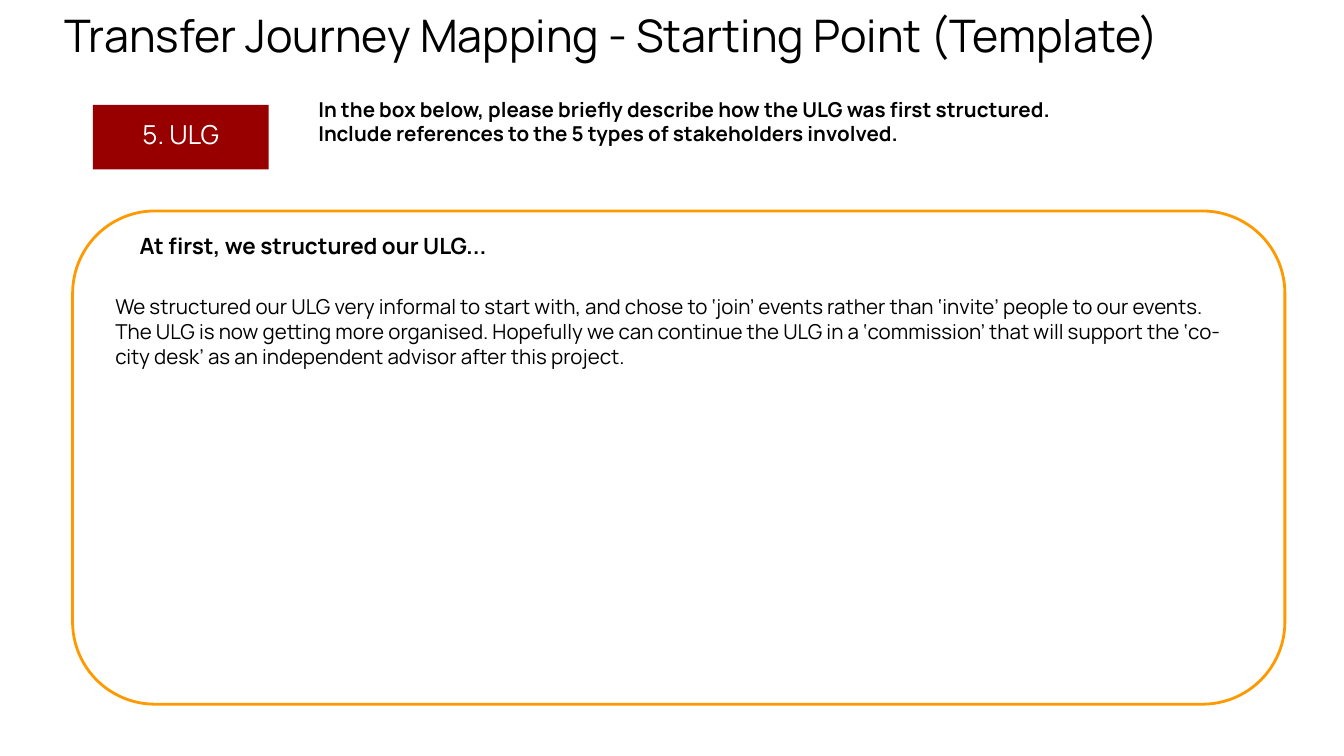
from dataclasses import dataclass

from pptx import Presentation
from pptx.dml.color import RGBColor
from pptx.enum.shapes import MSO_SHAPE as Shape
from pptx.enum.text import MSO_ANCHOR as Anchor, MSO_AUTO_SIZE as AutoSize, PP_ALIGN as Align
from pptx.util import Inches, Pt


@dataclass(frozen=True)
class Theme:
    font: str = "Manrope"
    ink: RGBColor = RGBColor(0x00, 0x00, 0x00)
    paper: RGBColor = RGBColor(0xFF, 0xFF, 0xFF)
    badge: RGBColor = RGBColor(0x98, 0x00, 0x00)
    frame: RGBColor = RGBColor(0xFF, 0x99, 0x00)
    title_size: int = 24
    badge_size: int = 14
    heading_size: int = 12
    body_size: int = 11
    frame_width: float = 1.5
    inset: float = 0.1


THEME = Theme()


def write(shape, text, size, color=THEME.ink, bold=False, align=Align.LEFT):
    frame = shape.text_frame
    frame.word_wrap = True
    frame.auto_size = AutoSize.NONE
    frame.vertical_anchor = Anchor.TOP
    frame.margin_left = frame.margin_right = Inches(THEME.inset)
    frame.margin_top = frame.margin_bottom = Inches(THEME.inset)
    paragraph = frame.paragraphs[0]
    paragraph.alignment = align
    run = paragraph.add_run()
    run.text = text
    run.font.name = THEME.font
    run.font.size = Pt(size)
    run.font.bold = bold
    run.font.color.rgb = color


def add_text(slide, box, text, size, bold=False):
    write(slide.shapes.add_textbox(*map(Inches, box)), text, size, bold=bold)


def add_plain_shape(slide, kind, box):
    shape = slide.shapes.add_shape(kind, *map(Inches, box))
    shape.shadow.inherit = False
    return shape


def place_title(slide, box, text):
    title = slide.shapes.title
    title.left, title.top, title.width, title.height = map(Inches, box)
    write(title, text, THEME.title_size)


def add_section_header(slide, box, label, instruction):
    """Numbered badge at the left, instruction beside it."""
    left, top, width, height = box
    badge = add_plain_shape(slide, Shape.RECTANGLE, (left, top + 0.16, 1.31, 0.48))
    badge.fill.solid()
    badge.fill.fore_color.rgb = THEME.badge
    badge.line.fill.background()
    write(badge, label, THEME.badge_size, THEME.paper, align=Align.CENTER)
    offset = 1.58
    add_text(slide, (left + offset, top, width - offset, height),
             instruction, THEME.body_size, bold=True)


def add_answer_panel(slide, box, heading, answer):
    """Rounded frame holding a heading and the answer below it."""
    left, top, width, height = box
    panel = add_plain_shape(slide, Shape.ROUNDED_RECTANGLE, box)
    panel.adjustments[0] = 0.167
    panel.fill.background()
    panel.line.color.rgb = THEME.frame
    panel.line.width = Pt(THEME.frame_width)
    add_text(slide, (left + 0.4, top + 0.06, 3.92, 0.39), heading, THEME.heading_size, bold=True)
    add_text(slide, (left + 0.22, top + 0.52, width - 0.5, height - 0.8), answer, THEME.body_size)


def main():
    presentation = Presentation()
    presentation.slide_width = Inches(10)
    presentation.slide_height = presentation.slide_width * 9 // 16
    slide = presentation.slides.add_slide(presentation.slide_layouts.get_by_name("Title Only"))
    slide.background.fill.solid()
    slide.background.fill.fore_color.rgb = THEME.paper

    place_title(slide, (0.38, -0.04, 9.13, 0.75),
                "Transfer Journey Mapping - Starting Point (Template)")
    add_section_header(
        slide, (0.69, 0.62, 7.25, 0.85), "5. ULG",
        "In the box below, please briefly describe how the ULG was first structured. "
        "Include references to the 5 types of stakeholders involved.")
    add_answer_panel(
        slide, (0.54, 1.57, 9.02, 3.67), "At first, we structured our ULG...",
        "We structured our ULG very informal to start with, and chose to ‘join’ events rather "
        "than ‘invite’ people to our events. The ULG is now getting more organised. Hopefully "
        "we can continue the ULG in a ‘commission’ that will support the ‘co-city desk’ as an "
        "independent advisor after this project.")
    presentation.save("out.pptx")


if __name__ == "__main__":
    main()
